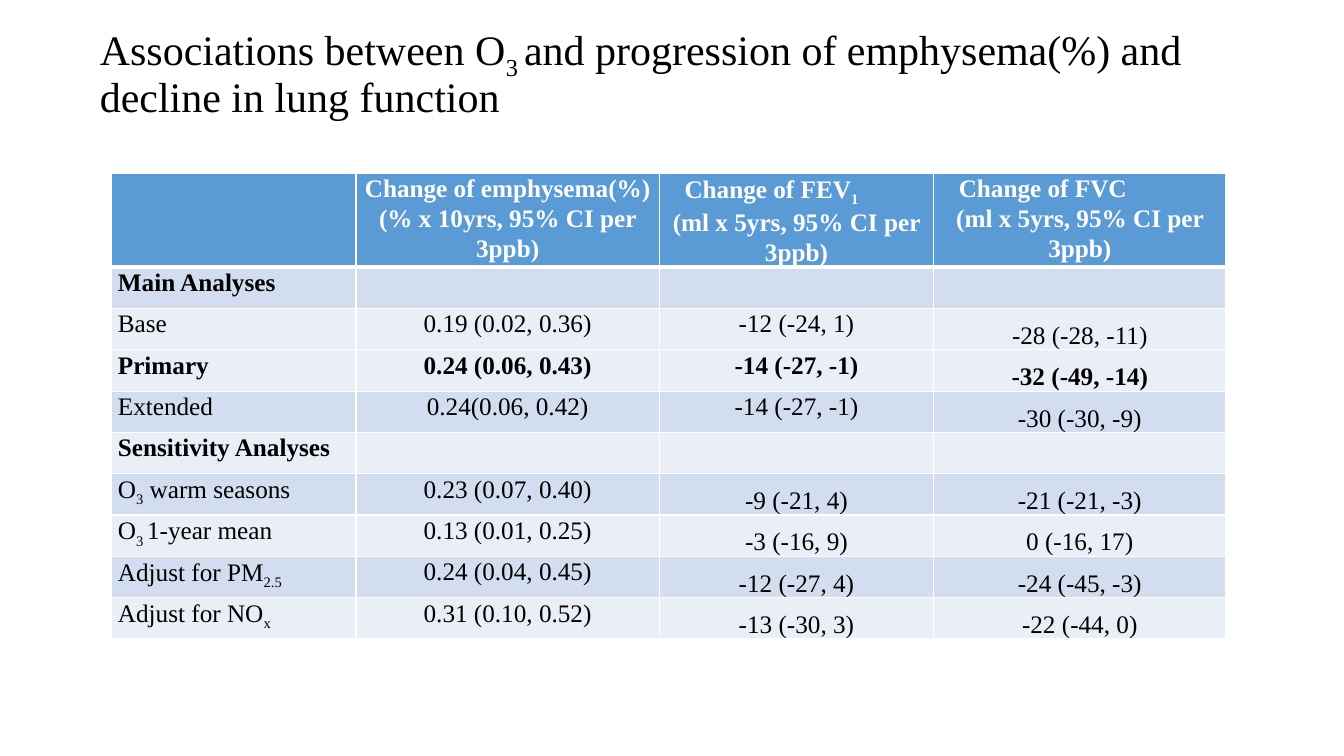
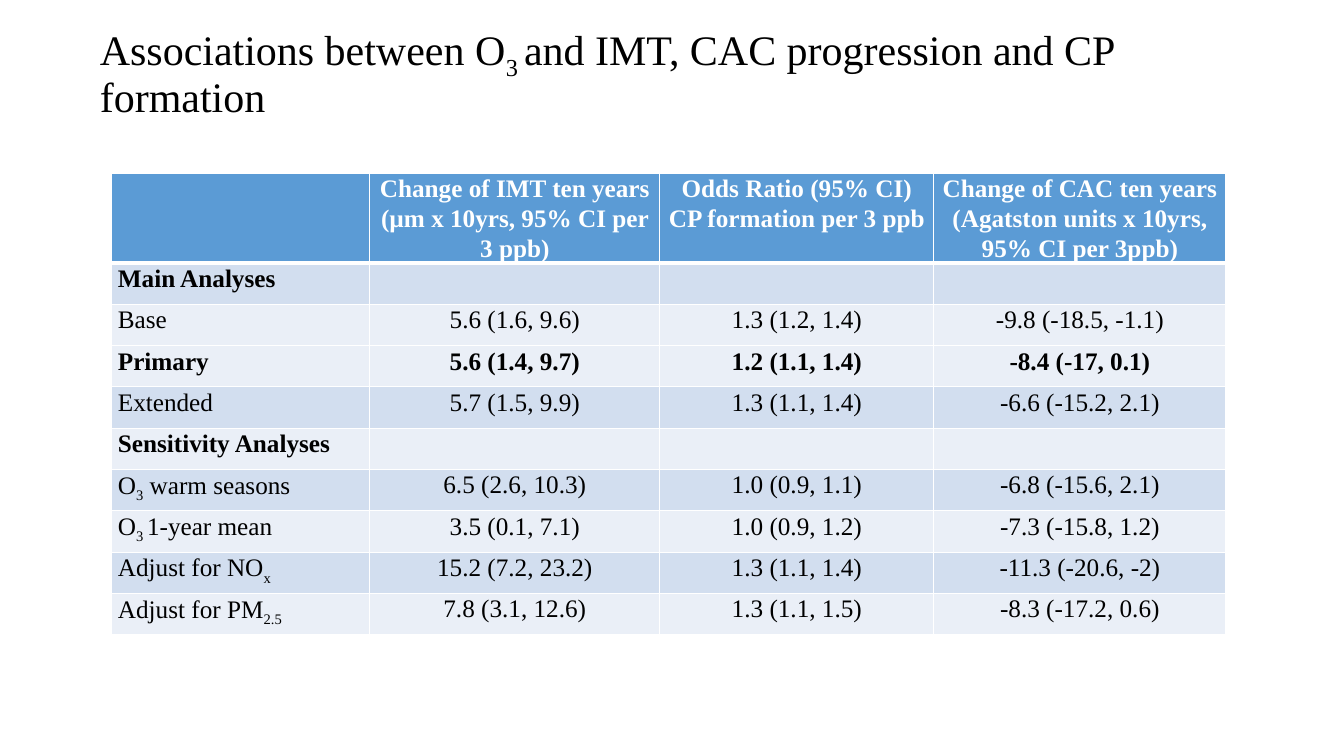
from pptx import Presentation
from pptx.dml.color import RGBColor
from pptx.enum.text import MSO_ANCHOR, MSO_AUTO_SIZE, PP_ALIGN
from pptx.oxml.ns import qn
from pptx.util import Inches, Pt
from lxml.etree import SubElement

COLORS = {"ink": "000000", "paper": "FFFFFF", "header": "5B9BD5",
          "dark": "D2DEEF", "light": "EAEFF7"}
FONT = "Times New Roman"
SLIDE_SIZE = (13.33, 7.5)
TITLE_BOX = (0.89, 0, 11.5, 1.45)
TABLE_BOX = (1.1, 1.72, 11.06, 4.46)
ROW_WEIGHTS = [77] + [41] * 9
DARK_ROWS = {1, 4, 6, 8}
BOLD_ROWS = {0, 1, 3, 5}
HEADER_INDENT = 0.18
CELL_MARGINS = {"margin_left": Inches(0.07), "margin_right": Inches(0.07),
                "margin_top": 0, "margin_bottom": 0}

SLIDES = [
    {
        "title": "Associations between O|3 |and progression of emphysema(%) and decline in lung function",
        "columns": [243, 301, 272, 290],
        "indented": {(0, 2), (0, 3)},
        "bottom": {(row, 3) for row in range(2, 10)} | {(row, 2) for row in range(6, 10)},
        "rows": [
            ["", "Change of emphysema(%)\n(% x 10yrs, 95% CI per 3ppb)",
             "Change of FEV|1|\n(ml x 5yrs, 95% CI per 3ppb)",
             "Change of FVC\n(ml x 5yrs, 95% CI per 3ppb)"],
            ["Main Analyses", "", "", ""],
            ["Base", "0.19 (0.02, 0.36)", "-12 (-24, 1)", "-28 (-28, -11)"],
            ["Primary", "0.24 (0.06, 0.43)", "-14 (-27, -1)", "-32 (-49, -14)"],
            ["Extended", "0.24(0.06, 0.42)", "-14 (-27, -1)", "-30 (-30, -9)"],
            ["Sensitivity Analyses", "", "", ""],
            ["O|3| warm seasons", "0.23 (0.07, 0.40)", "-9 (-21, 4)", "-21 (-21, -3)"],
            ["O|3 |1-year mean", "0.13 (0.01, 0.25)", "-3 (-16, 9)", "0 (-16, 17)"],
            ["Adjust for PM|2.5|", "0.24 (0.04, 0.45)", "-12 (-27, 4)", "-24 (-45, -3)"],
            ["Adjust for NO|x|", "0.31 (0.10, 0.52)", "-13 (-30, 3)", "-22 (-44, 0)"],
        ],
    },
    {
        "title": "Associations between O|3 |and IMT, CAC progression and CP formation",
        "columns": [257, 288, 272, 290],
        "indented": set(),
        "bottom": set(),
        "rows": [
            ["", "Change of IMT ten years\n(µm x 10yrs, 95% CI per 3 ppb)",
             "Odds Ratio (95% CI)\nCP formation per 3 ppb",
             "Change of CAC ten years (Agatston units x 10yrs, 95% CI per 3ppb)"],
            ["Main Analyses", "", "", ""],
            ["Base", "5.6 (1.6, 9.6)", "1.3 (1.2, 1.4)", "-9.8 (-18.5, -1.1)"],
            ["Primary", "5.6 (1.4, 9.7)", "1.2 (1.1, 1.4)", "-8.4 (-17, 0.1)"],
            ["Extended", "5.7 (1.5, 9.9)", "1.3 (1.1, 1.4)", "-6.6 (-15.2, 2.1)"],
            ["Sensitivity Analyses", "", "", ""],
            ["O|3| warm seasons", "6.5 (2.6, 10.3)", "1.0 (0.9, 1.1)", "-6.8 (-15.6, 2.1)"],
            ["O|3 |1-year mean", "3.5 (0.1, 7.1)", "1.0 (0.9, 1.2)", "-7.3 (-15.8, 1.2)"],
            ["Adjust for NO|x|", "15.2 (7.2, 23.2)", "1.3 (1.1, 1.4)", "-11.3 (-20.6, -2)"],
            ["Adjust for PM|2.5|", "7.8 (3.1, 12.6)", "1.3 (1.1, 1.5)", "-8.3 (-17.2, 0.6)"],
        ],
    },
]


def set_all(target, values):
    """Set every attribute of the target from a dict."""
    for name, value in values.items():
        setattr(target, name, value)


def write_paragraph(paragraph, text, size, color, bold, alignment, spacing):
    """Write one paragraph in which text between bars is subscript."""
    set_all(paragraph, {"alignment": alignment, "line_spacing": spacing})
    set_all(paragraph.font, {"name": FONT, "size": Pt(size)})
    for index, piece in enumerate(text.split("|")):
        if not piece:
            continue
        run = paragraph.add_run()
        run.text = piece
        set_all(run.font, {"name": FONT, "size": Pt(size), "bold": bold})
        run.font.color.rgb = RGBColor.from_string(COLORS[color])
        if index % 2:
            run._r.get_or_add_rPr().set("baseline", "-25000")


def add_borders(cell, row):
    """Draw white cell borders, with a thick one under the header row."""
    properties = cell._tc.get_or_add_tcPr()
    widths = {"lnL": 1, "lnR": 1, "lnT": 3 if row == 1 else 1, "lnB": 3 if row == 0 else 1}
    for position, (side, width) in enumerate(widths.items()):
        line = SubElement(properties, qn(f"a:{side}"), w=str(Pt(width)))
        fill = SubElement(line, qn("a:solidFill"))
        SubElement(fill, qn("a:srgbClr"), val=COLORS["paper"])
        properties.insert(position, line)


def place_title(slide, text, box):
    """Move and format the title placeholder."""
    title = slide.shapes.title
    set_all(title, dict(zip(("left", "top", "width", "height"), map(Inches, box))))
    set_all(title.text_frame, {"vertical_anchor": MSO_ANCHOR.MIDDLE, "word_wrap": True,
                               "auto_size": MSO_AUTO_SIZE.NONE})
    write_paragraph(title.text_frame.paragraphs[0], text, 30, "ink", False, PP_ALIGN.LEFT, 0.9)


def fill_cell(cell, text, row, column, content):
    """Format one table cell and write its paragraphs."""
    band = "header" if row == 0 else "dark" if row in DARK_ROWS else "light"
    cell.fill.solid()
    cell.fill.fore_color.rgb = RGBColor.from_string(COLORS[band])
    anchor = MSO_ANCHOR.BOTTOM if (row, column) in content["bottom"] else MSO_ANCHOR.TOP
    set_all(cell, {**CELL_MARGINS, "vertical_anchor": anchor})
    add_borders(cell, row)
    for index, line in enumerate(text.split("\n")):
        frame = cell.text_frame
        paragraph = frame.add_paragraph() if index else frame.paragraphs[0]
        indented = index == 0 and (row, column) in content["indented"]
        alignment = PP_ALIGN.LEFT if column == 0 or indented else PP_ALIGN.CENTER
        write_paragraph(paragraph, line, 18, "ink" if row else "paper",
                        row in BOLD_ROWS, alignment, 1.07)
        if indented:
            paragraph._p.get_or_add_pPr().set("marL", str(Inches(HEADER_INDENT)))


def place_table(slide, content, box):
    """Add the results table, dividing its box by column and row weights."""
    rows, columns = content["rows"], content["columns"]
    frame = slide.shapes.add_table(len(rows), len(columns), *map(Inches, box))
    table = frame.table
    table.horz_banding = False
    for column, weight in zip(table.columns, columns):
        column.width = Inches(box[2] * weight / sum(columns))
    for row, weight in zip(table.rows, ROW_WEIGHTS):
        row.height = Inches(box[3] * weight / sum(ROW_WEIGHTS))
    for row, texts in enumerate(rows):
        for column, text in enumerate(texts):
            fill_cell(table.cell(row, column), text, row, column, content)


def main():
    """Build the slides and save the presentation."""
    presentation = Presentation()
    presentation.slide_width, presentation.slide_height = map(Inches, SLIDE_SIZE)
    for content in SLIDES:
        slide = presentation.slides.add_slide(presentation.slide_layouts[5])
        place_title(slide, content["title"], TITLE_BOX)
        place_table(slide, content, TABLE_BOX)
    presentation.save("out.pptx")


if __name__ == "__main__":
    main()
